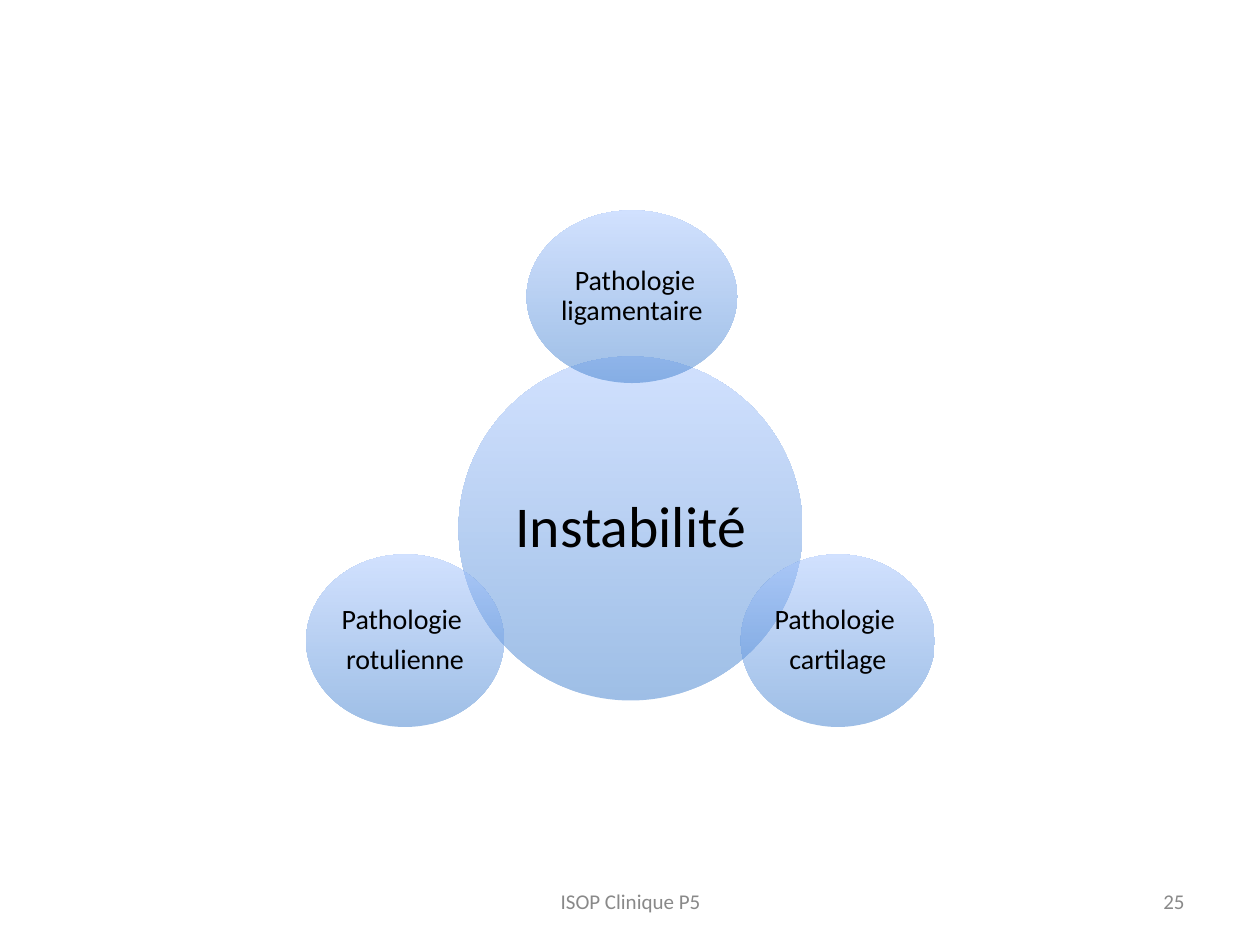
import pptx
import pptx.dml.color
import pptx.enum.shapes
import pptx.enum.text
import pptx.oxml
import pptx.oxml.ns
import pptx.util

Inches = pptx.util.Inches
Align = pptx.enum.text.PP_ALIGN

FONT = "Calibri"
GRADIENT = ("3F7FCE", "A4C4FF")  # bottom, top
OPACITY = 50  # percent


def colour(hex_value):
    return pptx.dml.color.RGBColor.from_string(hex_value)


def set_values(target, values):
    for name, value in values.items():
        setattr(target, name, value)


def write_text(frame, lines, size, text_colour, paragraph_format):
    """Fill a text frame with one paragraph per line."""
    set_values(frame, {"word_wrap": True,
                       "vertical_anchor": pptx.enum.text.MSO_ANCHOR.MIDDLE})
    for index, line in enumerate(lines):
        para = frame.paragraphs[0] if index == 0 else frame.add_paragraph()
        set_values(para, paragraph_format)
        span = para.add_run()
        span.text = line
        set_values(span.font, {"name": FONT, "size": pptx.util.Pt(size)})
        span.font.color.rgb = colour(text_colour)


def fill_gradient(shape):
    """Vertical, half-transparent gradient."""
    shape.fill.gradient()
    shape.fill.gradient_angle = 90
    for stop, hex_value in zip(shape.fill.gradient_stops, GRADIENT):
        stop.color.rgb = colour(hex_value)
    for rgb in shape.element.spPr.iter(pptx.oxml.ns.qn("a:srgbClr")):
        alpha = pptx.oxml.parse_xml(
            f'<a:alpha {pptx.oxml.ns.nsdecls("a")} val="{OPACITY * 1000}"/>')
        rgb.append(alpha)


def add_circle(group, lines, place, size):
    circle = group.shapes.add_shape(
        pptx.enum.shapes.MSO_SHAPE.OVAL, *map(Inches, place))
    circle.shadow.inherit = False
    circle.line.fill.background()
    fill_gradient(circle)
    frame = circle.text_frame
    set_values(frame, {f"margin_{side}": 0
                       for side in ("left", "top", "right", "bottom")})
    write_text(frame, lines, size, "000000", {
        "alignment": Align.CENTER,
        "line_spacing": 0.9,
        "space_after": pptx.util.Pt(round(size * 0.35, 1)),
    })


def add_footer(page, text, left, width, alignment):
    box = page.shapes.add_textbox(*map(Inches, (left, 6.95, width, 0.4)))
    write_text(box.text_frame, [text], 12, "898989", {"alignment": alignment})


def main():
    deck = pptx.Presentation()
    set_values(deck, {"slide_width": Inches(10), "slide_height": Inches(7.5)})
    page = deck.slides.add_slide(deck.slide_layouts[6])

    # Footer and page number
    add_footer(page, "ISOP Clinique P5", 3.42, 3.17, Align.CENTER)
    add_footer(page, "25", 7.17, 2.33, Align.RIGHT)

    # Central theme with three overlapping satellites
    diagram = page.shapes.add_group_shape()
    add_circle(diagram, ["Instabilité"], (3.64, 2.83, 2.73, 2.73), 33)
    satellites = [
        ([" Pathologie ligamentaire"], 4.18, 1.67, 1.67),
        (["Pathologie ", "cartilage"], 5.88, 4.4, 1.54),
        (["Pathologie ", "rotulienne"], 2.43, 4.4, 1.57),
    ]
    for lines, left, top, width in satellites:
        add_circle(diagram, lines, (left, top, width, 1.37), 16)

    deck.save("out.pptx")


if __name__ == "__main__":
    main()
